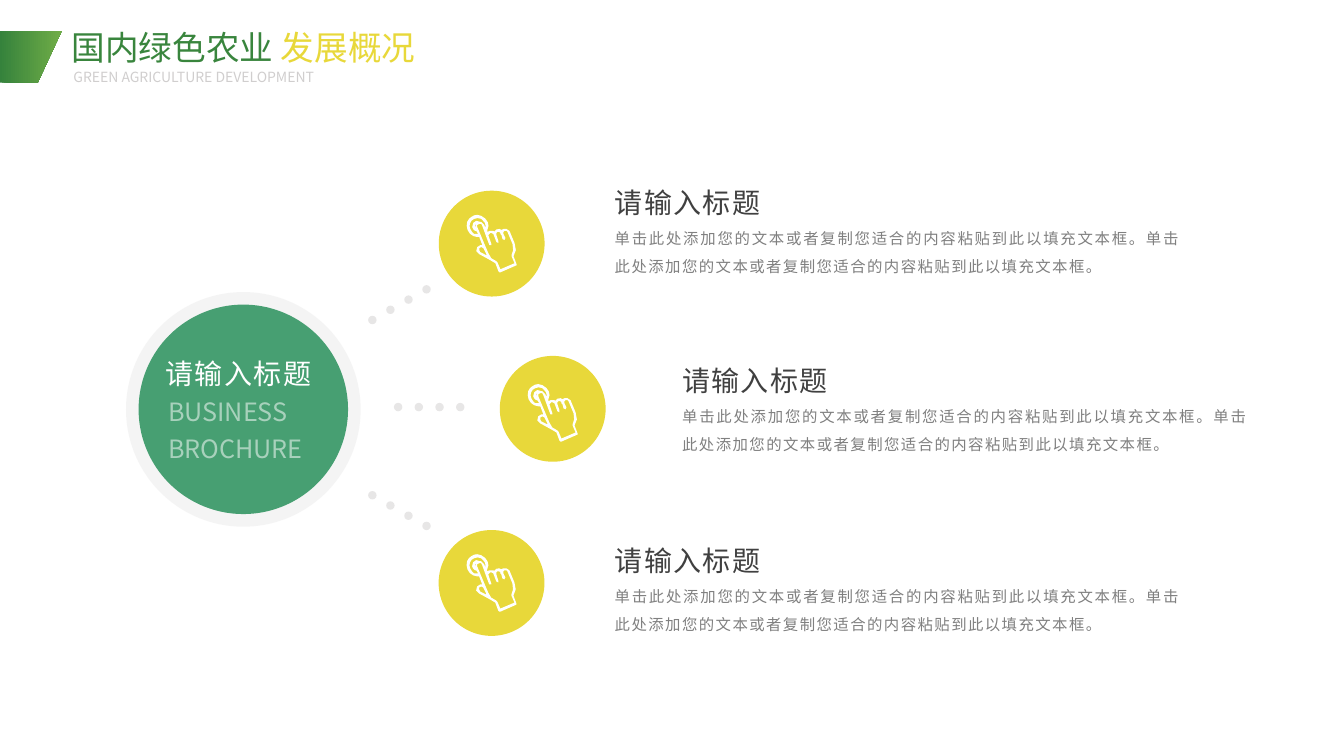
from lxml import etree
from pptx import Presentation
from pptx.dml.color import RGBColor
from pptx.enum.shapes import MSO_SHAPE
from pptx.enum.text import MSO_ANCHOR, MSO_AUTO_SIZE, PP_ALIGN
from pptx.oxml.ns import qn
from pptx.util import Pt

OVAL = MSO_SHAPE.OVAL
TOP = MSO_ANCHOR.TOP
GROW = MSO_AUTO_SIZE.SHAPE_TO_FIT_TEXT
JUSTIFY = PP_ALIGN.JUSTIFY

FONT = "Noto Sans CJK SC"
TITLE_GREEN = RGBColor(0x39, 0x85, 0x3D)
FLAG_DARK = RGBColor(0x35, 0x82, 0x3C)
FLAG_LIGHT = RGBColor(0x70, 0xAD, 0x47)
HUB_GREEN = RGBColor(0x47, 0x9F, 0x72)
YELLOW = RGBColor(0xE8, 0xD8, 0x3A)
WHITE = RGBColor(0xFF, 0xFF, 0xFF)
HALO_GREY = RGBColor(0xF2, 0xF2, 0xF2)
DOT_GREY = RGBColor(0xE7, 0xE6, 0xE6)
SUBTITLE_GREY = RGBColor(0xD0, 0xCE, 0xCE)
HEADING_GREY = RGBColor(0x40, 0x40, 0x40)
BODY_GREY = RGBColor(0x80, 0x80, 0x80)

HEADING = "请输入标题"
BODY = "单击此处添加您的文本或者复制您适合的内容粘贴到此以填充文本框。" * 2

HAND_UNIT = 0.72
HAND_OUTLINES = [
    [(11, 0), (15, 1), (18.9, 3.7), (21.4, 7.2), (22.2, 11), (21, 15), (21, 17),
     (23, 16), (27, 16), (28, 16.5), (30, 14.5), (33, 14), (35, 15), (37, 14),
     (40, 14), (43, 16), (48, 28), (49.3, 35), (47, 41), (50, 49), (50, 50),
     (34, 57), (33, 57), (32, 56), (29, 48), (24, 45), (13, 39), (10, 36),
     (11, 32), (14, 30), (16, 30), (13, 22), (11, 22), (7, 21), (3.7, 18.7),
     (1.4, 15.1), (0.5, 11), (1, 7), (2.8, 4), (5.2, 2), (8, 0.5)],
    [(8, 4), (5.5, 5.6), (4, 8), (3.3, 11), (4.2, 14.2), (6, 17.2), (8, 19),
     (12, 19), (10, 16), (9, 16), (7, 14.3), (6, 12), (7, 8), (10, 5.9),
     (14, 7), (15, 7), (18, 10), (19, 13), (19.3, 10.5), (18.4, 7.7),
     (15, 4), (11.3, 3.2)],
    [(10, 9), (9, 10), (9, 12), (9, 13)],
    [(13, 9), (11, 10), (11, 12), (22, 38), (24.9, 43), (30, 46), (31, 47),
     (34, 54), (48, 48), (45, 41), (45, 40), (46.6, 35), (46, 29), (41, 17),
     (40, 16), (38, 16), (37, 17), (37, 19), (39, 23), (38, 25), (36, 24),
     (35, 20), (34, 19), (34, 18), (33, 17), (31, 17), (30, 18), (30, 20),
     (32, 26), (32, 28), (30, 27), (27, 19), (25, 18), (24, 18), (22, 20),
     (25, 29), (25, 30), (23, 30), (20, 22), (16, 11), (15, 9)],
    [(15, 32), (13, 33), (13, 35), (14, 37), (20, 40), (20, 39), (17, 33)],
]


def set_alpha(element, percent):
    color = next(element.iter(qn("a:srgbClr")))
    etree.SubElement(color, qn("a:alpha")).set("val", str(percent * 1000))


def add_span(para, text, size, color, spacing=0, alpha=None):
    span = para.add_run()
    span.text = text
    span.font.size = Pt(size)
    span.font.fill.solid()
    span.font.fill.fore_color.rgb = color
    span.font.name = FONT
    properties = span.font._element
    etree.SubElement(properties, qn("a:ea")).set("typeface", FONT)
    if spacing:
        properties.set("spc", str(spacing * 100))
    if alpha:
        set_alpha(properties, alpha)


def place(shape, left, top, width, height):
    shape.left, shape.top = Pt(left), Pt(top)
    shape.width, shape.height = Pt(width), Pt(height)


def format_text(shape, line_spacing=1.0):
    frame = shape.text_frame
    frame.word_wrap = True
    frame.auto_size = GROW
    frame.vertical_anchor = TOP
    para = frame.paragraphs[0]
    para.alignment = JUSTIFY
    para.line_spacing = line_spacing
    para.space_before = Pt(0)
    return para


def add_text(page, box, text, size, color, line_spacing=1.0, spacing=0, alpha=None):
    shape = page.shapes.add_textbox(*(Pt(length) for length in box))
    para = format_text(shape, line_spacing)
    add_span(para, text, size, color, spacing, alpha)


def add_circle(page, left, top, diameter, color):
    circle = page.shapes.add_shape(OVAL, Pt(left), Pt(top), Pt(diameter), Pt(diameter))
    circle.shadow.inherit = False
    circle.fill.solid()
    circle.fill.fore_color.rgb = color
    circle.line.fill.background()
    return circle


def add_outline(page, left, top, outlines, unit):
    scaled = [[(x * unit * 100, y * unit * 100) for x, y in outline] for outline in outlines]
    first, *others = scaled
    builder = page.shapes.build_freeform(*first[0], scale=Pt(0.01))
    builder.add_line_segments(first[1:], close=True)
    for outline in others:
        builder.move_to(*outline[0])
        builder.add_line_segments(outline[1:], close=True)
    shape = builder.convert_to_shape(Pt(left), Pt(top))
    shape.shadow.inherit = False
    shape.line.fill.background()
    return shape


def add_header(page, left, top):
    flag = add_outline(page, left, top, [[(0, 0), (44, 0), (27, 36.7), (0, 36.7)]], 1)
    flag.fill.gradient()
    flag.fill.gradient_angle = 0
    for stop, color in zip(flag.fill.gradient_stops, (FLAG_DARK, FLAG_LIGHT)):
        stop.color.rgb = color
    title = page.shapes.title
    place(title, left + 44, top - 6.5, 284, 36)
    para = format_text(title)
    add_span(para, "国内绿色农业 ", 24, TITLE_GREEN)
    add_span(para, "发展概况", 24, YELLOW)
    add_text(page, (left + 45.4, top + 23, 282, 19.4),
             "GREEN AGRICULTURE DEVELOPMENT", 10, SUBTITLE_GREY)


def add_hub(page, left, top):
    halo = add_circle(page, left, top, 167.6, HALO_GREY)
    set_alpha(halo._element.spPr, 79)
    add_circle(page, left + 9, top + 9, 149.6, HUB_GREEN)
    add_text(page, (left + 21, top + 42.6, 121, 31.7), HEADING, 20, WHITE, spacing=1)
    for row, word in enumerate(("BUSINESS", "BROCHURE")):
        add_text(page, (left + 23, top + 70.6 + row * 26.6, 121, 29), word, 18, WHITE, alpha=52)


def add_dots(page, left, top, step_x, step_y):
    for index in range(4):
        add_circle(page, left + index * step_x, top + index * step_y, 6, DOT_GREY)


def add_icon(page, left, top, hand_drop):
    add_circle(page, left, top, 75.6, YELLOW)
    hand = add_outline(page, left + 19.6, top + hand_drop, HAND_OUTLINES, HAND_UNIT)
    hand.fill.solid()
    hand.fill.fore_color.rgb = WHITE


def add_entry(page, left, top):
    add_text(page, (left, top, 148.3, 31.7), HEADING, 20, HEADING_GREY, spacing=1)
    add_text(page, (left, top + 24.8, 418.3, 67), BODY, 11, BODY_GREY, 1.5, 1)


def main():
    deck = Presentation()
    deck.slide_width, deck.slide_height = Pt(960), Pt(540)
    page = deck.slides.add_slide(deck.slide_layouts[5])
    add_header(page, 0, 22.3)
    add_hub(page, 90, 208.6)
    for dots in ((263, 225.6, 12.9, -7.3), (281.4, 287.8, 14.8, 0), (263, 350.8, 12.9, 7.3)):
        add_dots(page, *dots)
    for icon in ((313.4, 136.2, 17.3), (357, 254.2, 20.2), (313.3, 378.6, 17.3)):
        add_icon(page, *icon)
    for entry in ((432, 128.8), (480.2, 256.2), (432, 384.4)):
        add_entry(page, *entry)
    deck.save("out.pptx")


if __name__ == "__main__":
    main()
